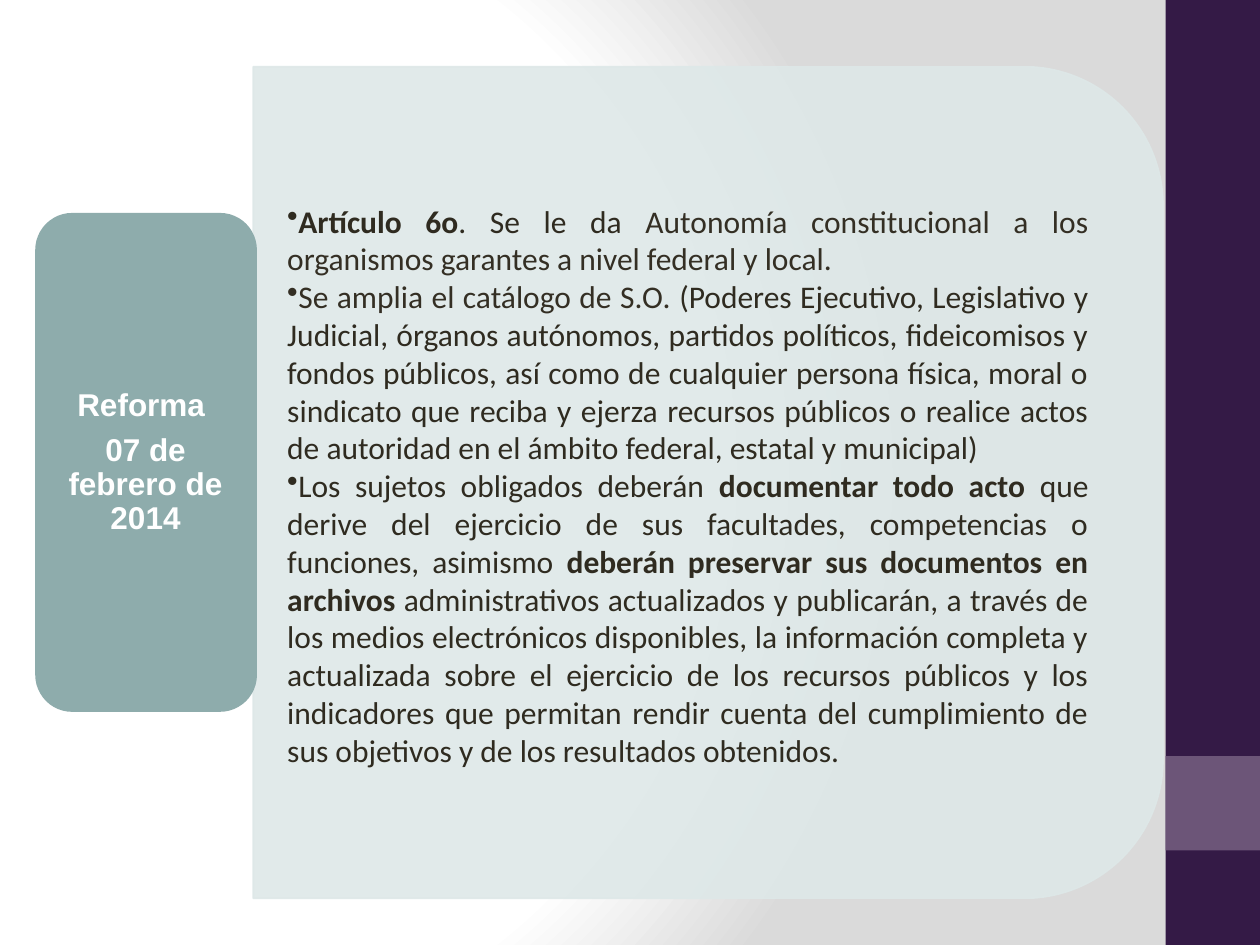
"""Build the slide on the reform of 7 February 2014."""
from lxml import etree
from pptx import Presentation
from pptx.dml.color import RGBColor
from pptx.enum.shapes import MSO_SHAPE as Shape
from pptx.enum.text import MSO_ANCHOR as Anchor, PP_ALIGN as Align
from pptx.oxml import parse_xml
from pptx.oxml.ns import nsdecls, qn
from pptx.util import Inches, Pt

COLORS = {
    "white": "FFFFFF", "gray": "DADADA", "purple": "341A46", "mauve": "6C5578",
    "pale": "DEE8E8", "teal": "8EACAC", "text": "2F2B20", "soft": "342F24",
}
ARTICLES = [
    [("Artículo 6o", True, "text"), (". Se le da ", False, "text"),
     ("Autonomía constitucional a los organismos garantes a nivel federal y local. ", False, "soft")],
    [("Se amplia el catálogo de S.O. ", False, "soft"),
     ("(Poderes Ejecutivo, Legislativo y Judicial, órganos autónomos, partidos políticos, "
      "fideicomisos y fondos públicos, así como de cualquier persona física, moral o sindicato "
      "que reciba y ejerza recursos públicos o realice actos de autoridad en el ámbito federal, "
      "estatal y municipal)", False, "text")],
    [("Los sujetos obligados deberán ", False, "text"), ("documentar todo acto ", True, "text"),
     ("que derive del ejercicio de sus facultades, competencias o funciones, asimismo ", False, "text"),
     ("deberán preservar sus documentos en archivos", True, "text"),
     (" administrativos actualizados y publicarán, a través de los medios electrónicos "
      "disponibles, la información completa y actualizada sobre el ejercicio de los recursos "
      "públicos y los indicadores que permitan rendir cuenta del cumplimiento de sus objetivos "
      "y de los resultados obtenidos.", False, "text")],
]
TITLE = [[("Reforma ", True, "white")], [("07 de febrero de 2014", True, "white")]]

deck = Presentation()
deck.slide_width, deck.slide_height = Inches(10), Inches(7.5)
page = deck.slides.add_slide(deck.slide_layouts[6])

page.background.fill.solid()
background = page.background._cSld.find(qn("p:bg")).find(qn("p:bgPr"))
stops = "".join(
    f'<a:gs pos="{place}000"><a:srgbClr val="{COLORS[name]}"/></a:gs>'
    for place, name in [(0, "white"), (75, "white"), (100, "gray")]
)
gradient = parse_xml(
    f'<a:gradFill {nsdecls("a")} rotWithShape="1"><a:gsLst>{stops}</a:gsLst><a:path path="circle">'
    '<a:fillToRect l="20000" t="50000" r="100000" b="50000"/></a:path></a:gradFill>'
)
background.replace(background.find(qn("a:solidFill")), gradient)

for kind, place, color, turn, alpha in [
    (Shape.RECTANGLE, (9.25, 0, 0.75, 7.5), "purple", 0, None),
    (Shape.RECTANGLE, (9.25, 6, 0.75, 0.75), "mauve", 0, None),
    (Shape.ROUND_2_SAME_RECTANGLE, (2.32, 0.22, 6.6, 7.22), "pale", 90, "90000"),
    (Shape.ROUNDED_RECTANGLE, (0.28, 1.69, 1.76, 3.96), "teal", 0, None),
]:
    shape = page.shapes.add_shape(kind, *map(Inches, place))
    shape.shadow.inherit = False
    shape.rotation = turn
    shape.fill.solid()
    shape.fill.fore_color.rgb = RGBColor.from_string(COLORS[color])
    shape.line.fill.background()
    if alpha:
        shape.line.color.rgb = RGBColor.from_string(COLORS[color])
        shape.line.width = Pt(1)
        for tint in shape._element.spPr.iter(qn("a:srgbClr")):
            etree.SubElement(tint, qn("a:alpha"), val=alpha)

for place, inset, paragraphs, font, bullet, layout in [
    ((2.01, 0.87, 6.9, 5.96), (0.27, 0.14), ARTICLES, "Calibri", "•",
     {"alignment": Align.JUSTIFY, "line_spacing": 1.0}),
    ((0.36, 1.78, 1.59, 3.78), (0.07, 0.04), TITLE, "Arial", None,
     {"alignment": Align.CENTER, "line_spacing": 0.9}),
]:
    box = page.shapes.add_textbox(*map(Inches, place))
    frame = box.text_frame
    side, edge = map(Inches, inset)
    for name, value in {
        "word_wrap": True, "vertical_anchor": Anchor.MIDDLE, "margin_left": side,
        "margin_right": side, "margin_top": edge, "margin_bottom": edge,
    }.items():
        setattr(frame, name, value)
    for index, pieces in enumerate(paragraphs):
        para = frame.add_paragraph() if index else frame.paragraphs[0]
        for name, value in layout.items():
            setattr(para, name, value)
        if bullet:
            etree.SubElement(para._p.get_or_add_pPr(), qn("a:buChar"), char=bullet)
        elif index == 0:
            para.space_after = Pt(6.3)
        for text, bold, color in pieces:
            span = para.add_run()
            span.text = text
            for name, value in {"name": font, "size": Pt(18), "bold": bold}.items():
                setattr(span.font, name, value)
            span.font.color.rgb = RGBColor.from_string(COLORS[color])

deck.save("out.pptx")
